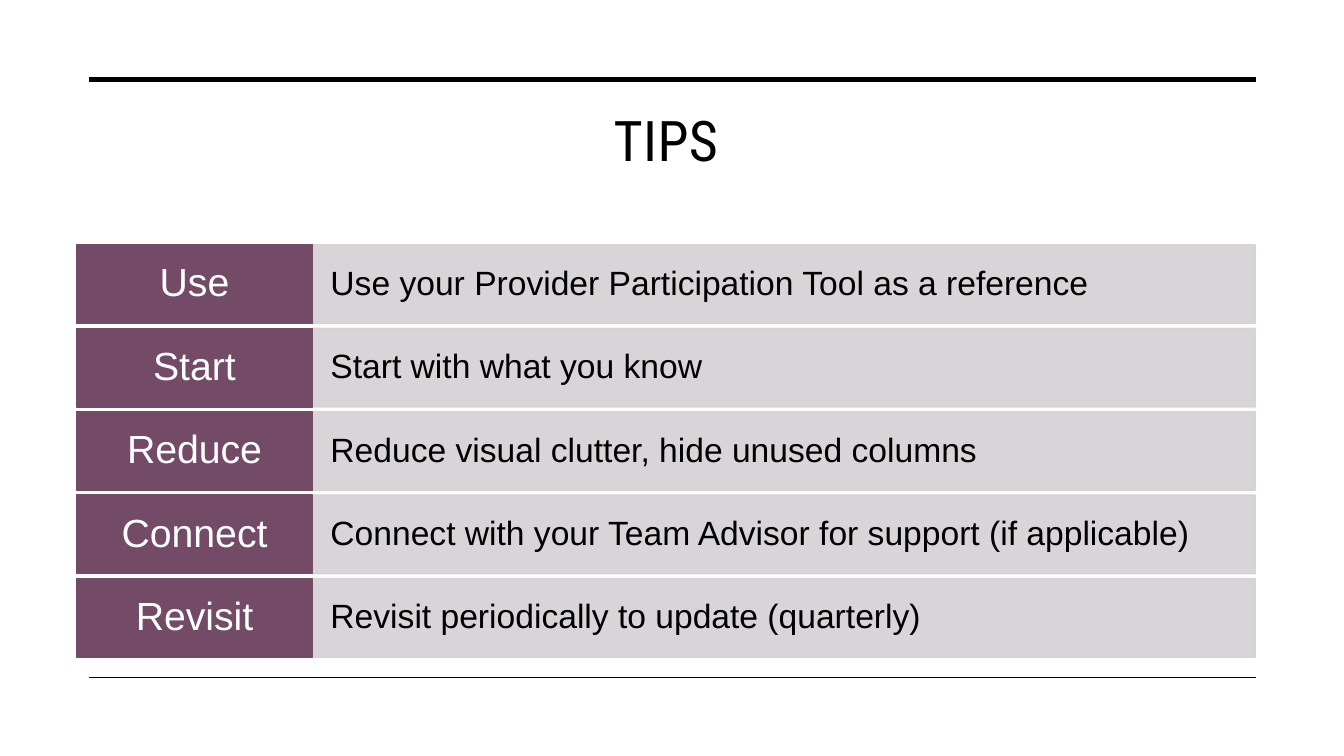
from lxml import etree
from pptx import Presentation
from pptx.dml.color import RGBColor
from pptx.enum.shapes import MSO_CONNECTOR, MSO_SHAPE
from pptx.enum.text import MSO_ANCHOR, PP_ALIGN
from pptx.oxml.ns import qn
from pptx.util import Inches, Pt

# Content
TITLE = "TIPS"
TIPS = [
    ("Use", "Use your Provider Participation Tool as a reference"),
    ("Start", "Start with what you know"),
    ("Reduce", "Reduce visual clutter, hide unused columns"),
    ("Connect", "Connect with your Team Advisor for support (if applicable)"),
    ("Revisit", "Revisit periodically to update (quarterly)"),
]
COLORS = {"ink": "000000", "label": "734B67", "detail": "D5D0D3", "light": "FFFFFF"}

# Grid, in inches
SLIDE_W, SLIDE_H = 13.33, 7.5
LEFT, WIDTH = 0.76, 11.69
LABEL_W = WIDTH / 5
ROW_TOP, ROW_BOTTOM, ROW_H = 2.43, 6.52, 0.78
ROW_STEP = (ROW_BOTTOM - ROW_TOP - ROW_H) / (len(TIPS) - 1)
RULE_LEFT, RULE_RIGHT = 0.88, 12.46
RULES = [(0.79, 3.5), (6.72, 1)]  # height on slide, weight in points


def rgb(name):
    return RGBColor.from_string(COLORS[name])


def write(sp, text, font, size, color, align, inset, anchor):
    tf = sp.text_frame
    tf.word_wrap = True
    tf.vertical_anchor = anchor
    tf.margin_left = tf.margin_right = Inches(inset[0])
    tf.margin_top = tf.margin_bottom = Inches(inset[1])
    p = tf.paragraphs[0]
    p.text = text
    p.alignment = align
    r = p.runs[0]
    r.font.name, r.font.size = font, Pt(size)
    r.font.color.rgb = rgb(color)
    return p


def add_bar(left, top, width, color, alpha=None):
    sp = slide.shapes.add_shape(MSO_SHAPE.RECTANGLE, Inches(left), Inches(top),
                                Inches(width), Inches(ROW_H))
    sp.shadow.inherit = False
    sp.fill.solid()
    sp.fill.fore_color.rgb = sp.line.color.rgb = rgb(color)
    sp.line.width = Pt(1)
    if alpha:
        for clr in sp._element.spPr.iter(qn("a:srgbClr")):
            etree.SubElement(clr, qn("a:alpha"), val=str(alpha * 1000))
    return sp


prs = Presentation()
prs.slide_width, prs.slide_height = Inches(SLIDE_W), Inches(SLIDE_H)
slide = prs.slides.add_slide(prs.slide_layouts[6])

# Rules above and below
for y, weight in RULES:
    rule = slide.shapes.add_connector(MSO_CONNECTOR.STRAIGHT, Inches(RULE_LEFT), Inches(y),
                                      Inches(RULE_RIGHT), Inches(y))
    rule.line.color.rgb = rgb("ink")
    rule.line.width = Pt(weight)
    etree.SubElement(rule._element.spPr, qn("a:effectLst"))

# Title
title = slide.shapes.add_textbox(Inches(LEFT), Inches(1), Inches(WIDTH), Inches(1.43))
p = write(title, TITLE, "Roboto Condensed", 40, "ink", PP_ALIGN.CENTER, (0.1, 0.05),
          MSO_ANCHOR.TOP)
p.runs[0].font._element.set("spc", "30")

# Tips: a detail bar and its label on each row
for i, (label, detail) in enumerate(TIPS):
    top = ROW_TOP + i * ROW_STEP
    bar = add_bar(LEFT + LABEL_W, top, WIDTH - LABEL_W, "detail", 90)
    tag = add_bar(LEFT, top, LABEL_W, "label")
    for p in (
        write(bar, detail, "Arial", 24, "ink", PP_ALIGN.LEFT, (0.18, 0.2), MSO_ANCHOR.MIDDLE),
        write(tag, label, "Arial", 28, "light", PP_ALIGN.CENTER, (0.12, 0.08), MSO_ANCHOR.MIDDLE),
    ):
        p.line_spacing = 0.9

prs.save("out.pptx")
